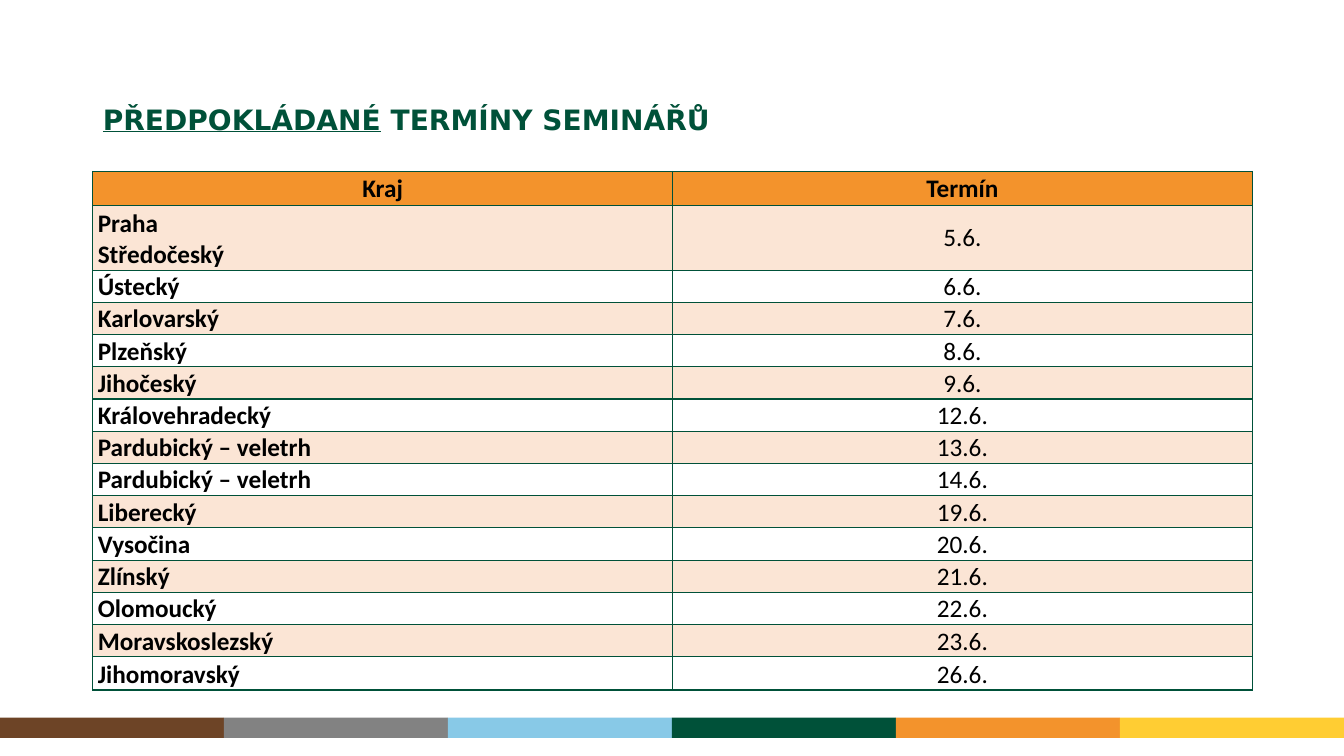
from dataclasses import dataclass

import pptx
import pptx.dml.color
import pptx.enum.shapes
import pptx.enum.text
import pptx.oxml.ns
import pptx.util
from lxml import etree

Inches = pptx.util.Inches
Pt = pptx.util.Pt
ALIGN = pptx.enum.text.PP_ALIGN
ANCHOR = pptx.enum.text.MSO_ANCHOR
qn = pptx.oxml.ns.qn

GREEN = "005139"
ORANGE = "F3932C"
BAND_ORANGE = "ED7D31"
STRIPE_COLOURS = ["6D4426", "828282", "88C9E7", GREEN, ORANGE, "FFCD33"]
SLIDE_WIDTH = 13.33


@dataclass
class Seminar:
    region: str
    date: str
    height: float = 0.32
    date_anchor: ANCHOR = ANCHOR.BOTTOM


SEMINARS = [
    Seminar("Praha\nStředočeský", "5.6.", 0.64, ANCHOR.MIDDLE),
    Seminar("Ústecký", "6.6."),
    Seminar("Karlovarský", "7.6."),
    Seminar("Plzeňský", "8.6."),
    Seminar("Jihočeský", "9.6."),
    Seminar("Královehradecký", "12.6."),
    Seminar("Pardubický – veletrh", "13.6."),
    Seminar("Pardubický – veletrh", "14.6."),
    Seminar("Liberecký", "19.6."),
    Seminar("Vysočina", "20.6."),
    Seminar("Zlínský", "21.6."),
    Seminar("Olomoucký", "22.6."),
    Seminar("Moravskoslezský", "23.6."),
    Seminar("Jihomoravský", "26.6.", 0.33),
]


def colour(value: str) -> pptx.dml.color.RGBColor:
    return pptx.dml.color.RGBColor.from_string(value)


def add_borders(cell) -> None:
    """Outline a cell; borders must come before its fill in the XML."""
    properties = cell._tc.get_or_add_tcPr()
    for position, side in enumerate(("a:lnL", "a:lnR", "a:lnT", "a:lnB")):
        line = etree.Element(qn(side), w=str(Pt(1)))
        fill = etree.SubElement(line, qn("a:solidFill"))
        etree.SubElement(fill, qn("a:srgbClr"), val=GREEN)
        properties.insert(position, line)


def fill_cell(cell, value: str | None, opacity: int = 100) -> None:
    if value is None:
        cell.fill.background()
        return
    cell.fill.solid()
    cell.fill.fore_color.rgb = colour(value)
    if opacity < 100:
        rgb = cell._tc.tcPr.find(f"{qn('a:solidFill')}/{qn('a:srgbClr')}")
        etree.SubElement(rgb, qn("a:alpha"), val=str(opacity * 1000))


def write_cell(cell, text: str, bold: bool, align: ALIGN, anchor: ANCHOR) -> None:
    cell.text = text
    cell.vertical_anchor = anchor
    cell.margin_left = cell.margin_right = Inches(0.05)
    cell.margin_top = cell.margin_bottom = 0
    for paragraph in cell.text_frame.paragraphs:
        paragraph.alignment = align
        paragraph.font.name = "Calibri"
        paragraph.font.size = Pt(18)
        paragraph.font.bold = bold
        paragraph.font.color.rgb = colour("000000")
    add_borders(cell)


def add_stripe(slide) -> None:
    width = SLIDE_WIDTH / len(STRIPE_COLOURS)
    for index, value in enumerate(STRIPE_COLOURS):
        block = slide.shapes.add_shape(
            pptx.enum.shapes.MSO_SHAPE.RECTANGLE,
            Inches(index * width), Inches(7.12), Inches(width), Inches(0.2))
        block.shadow.inherit = False
        block.fill.solid()
        block.fill.fore_color.rgb = colour(value)
        block.line.fill.background()


def write_title(slide) -> None:
    title = slide.shapes.title
    title.left, title.top = Inches(0.92), Inches(0.99)
    title.width, title.height = Inches(9.56), Inches(0.43)
    frame = title.text_frame
    frame.word_wrap = True
    frame.auto_size = pptx.enum.text.MSO_AUTO_SIZE.NONE
    frame.vertical_anchor = ANCHOR.MIDDLE
    heading = frame.paragraphs[0]
    heading.alignment = ALIGN.LEFT
    heading.line_spacing = 0.9
    heading.font.name = "DejaVu Sans"
    heading.font.size = Pt(20)
    heading.font.bold = True
    heading.font.color.rgb = colour(GREEN)
    expected = heading.add_run()
    expected.text = "PŘEDPOKLÁDANÉ"
    expected.font.underline = True
    heading.add_run().text = " TERMÍNY SEMINÁŘŮ"


def add_schedule(slide) -> None:
    heights = [0.34] + [seminar.height for seminar in SEMINARS]
    schedule = slide.shapes.add_table(
        len(heights), 2, Inches(0.92), Inches(1.7),
        Inches(11.5), Inches(sum(heights))).table
    for row, height in zip(schedule.rows, heights):
        row.height = Inches(height)

    # Header row
    for column, label in enumerate(("Kraj", "Termín")):
        cell = schedule.cell(0, column)
        write_cell(cell, label, True, ALIGN.CENTER, ANCHOR.MIDDLE)
        fill_cell(cell, ORANGE)

    # Seminar rows, every other one tinted
    for number, seminar in enumerate(SEMINARS, start=1):
        region, date = schedule.cell(number, 0), schedule.cell(number, 1)
        write_cell(region, seminar.region, True, ALIGN.LEFT, ANCHOR.BOTTOM)
        write_cell(date, seminar.date, False, ALIGN.CENTER, seminar.date_anchor)
        for cell in (region, date):
            fill_cell(cell, BAND_ORANGE if number % 2 else None, 20)


def main() -> None:
    presentation = pptx.Presentation()
    presentation.slide_width = Inches(SLIDE_WIDTH)
    presentation.slide_height = Inches(7.5)
    slide = presentation.slides.add_slide(presentation.slide_layouts[5])
    add_stripe(slide)
    write_title(slide)
    add_schedule(slide)
    presentation.save("out.pptx")


if __name__ == "__main__":
    main()
